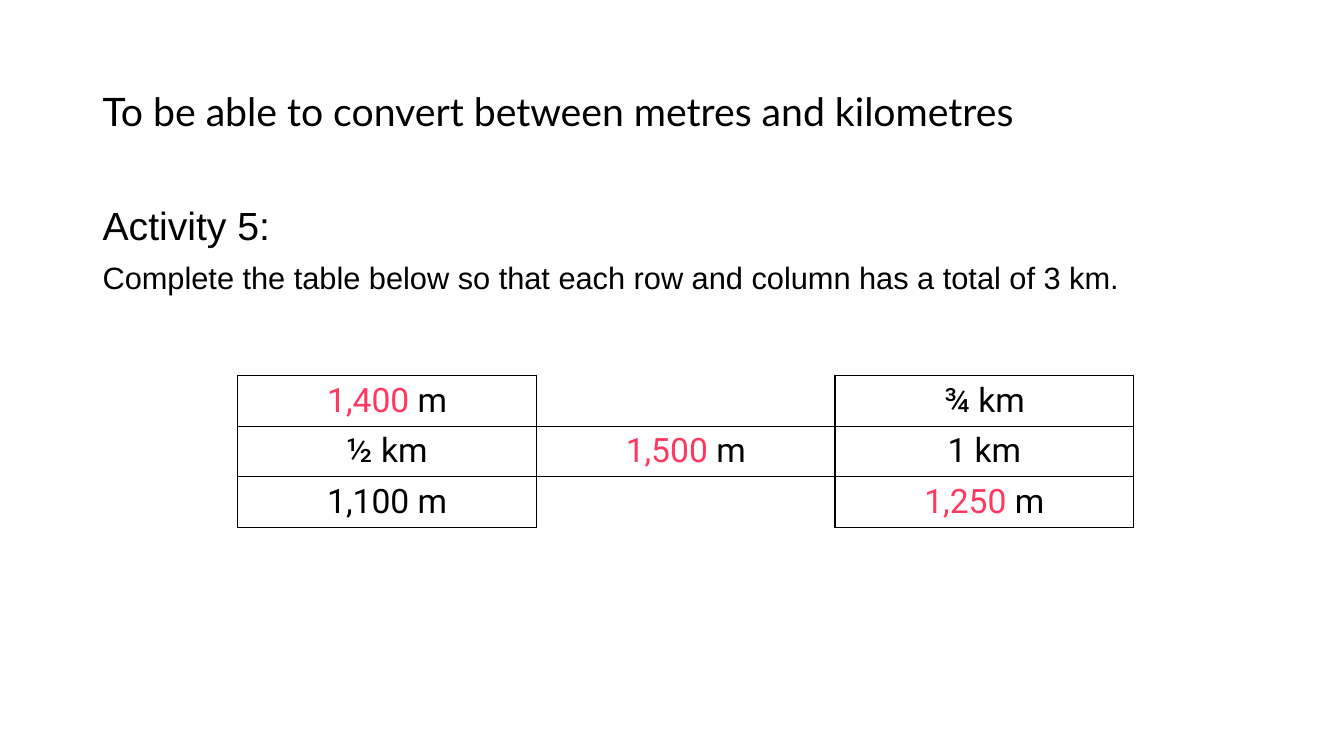
from lxml import etree
from pptx import Presentation
from pptx.dml.color import RGBColor
from pptx.enum import text
from pptx.oxml import ns
from pptx.util import Pt

BLACK = RGBColor(0x00, 0x00, 0x00)
WHITE = RGBColor(0xFF, 0xFF, 0xFF)
ANSWER_RED = RGBColor(0xFF, 0x38, 0x60)

TITLE = [("To be able to convert between metres and kilometres", 28)]
TASK = [
    ("Activity 5:", 28),
    ("Complete the table below so that each row and column has a total of 3 km.", 22),
]
# Each cell is (answer in red, remainder in black); None is an open cell.
LENGTHS = [
    [("1,400", " m"), None, ("", "¾ km")],
    [("", "½ km"), ("1,500", " m"), ("", "1 km")],
    [("", "1,100 m"), None, ("1,250", " m")],
]

TEXT_LEFT = 66.24
TABLE_LEFT, TABLE_TOP = 169.9, 268.5
COLUMN_WIDTH, ROW_HEIGHT = 213.3, 35.6


def style_run(run, font_name, size, color):
    run.font.name = font_name
    run.font.size = Pt(size)
    run.font.color.rgb = color


def add_text(slide, lines, font_name, top, width, height, anchor):
    box = slide.shapes.add_textbox(Pt(TEXT_LEFT), Pt(top), Pt(width), Pt(height))
    frame = box.text_frame
    frame.word_wrap = True
    frame.vertical_anchor = anchor
    frame.text = "\n".join(line for line, size in lines)
    for index, (paragraph, (line, size)) in enumerate(zip(frame.paragraphs, lines)):
        paragraph.line_spacing = 0.9
        paragraph.space_before = Pt(10 if index else 0)
        style_run(paragraph.runs[0], font_name, size, BLACK)


def set_borders(cell, visible_sides):
    """Draw the given sides (of "LRTB") in black and hide the others."""
    properties = cell._tc.get_or_add_tcPr()
    for side in "LRTB":
        line = etree.SubElement(properties, ns.qn(f"a:ln{side}"), w=str(Pt(1)))
        if side in visible_sides:
            fill = etree.SubElement(line, ns.qn("a:solidFill"))
            etree.SubElement(fill, ns.qn("a:srgbClr"), val=str(BLACK))
        else:
            etree.SubElement(line, ns.qn("a:noFill"))


def fill_cell(cell, parts):
    cell.fill.solid()
    cell.fill.fore_color.rgb = WHITE
    paragraph = cell.text_frame.paragraphs[0]
    paragraph.alignment = text.PP_ALIGN.CENTER
    for part, color in zip(parts, (ANSWER_RED, BLACK)):
        if part:
            run = paragraph.add_run()
            run.text = part
            style_run(run, "Roboto", 24, color)


def add_length_table(slide):
    row_count, column_count = len(LENGTHS), len(LENGTHS[0])
    table = slide.shapes.add_table(
        row_count, column_count, Pt(TABLE_LEFT), Pt(TABLE_TOP),
        Pt(COLUMN_WIDTH * column_count), Pt(ROW_HEIGHT * row_count)).table
    table.first_row = False
    table.horz_banding = False
    for column in table.columns:
        column.width = Pt(COLUMN_WIDTH)
    for row_index, row in enumerate(LENGTHS):
        table.rows[row_index].height = Pt(ROW_HEIGHT)
        for column_index, parts in enumerate(row):
            cell = table.cell(row_index, column_index)
            if parts:
                set_borders(cell, "LRTB")
                fill_cell(cell, parts)
            else:
                set_borders(cell, "LRB" if row_index == 0 else "LRT")
                cell.fill.background()


def main():
    presentation = Presentation()
    presentation.slide_width, presentation.slide_height = Pt(960), Pt(540)
    slide = presentation.slides.add_slide(presentation.slide_layouts[6])
    add_text(slide, TITLE, "Lato", 28.8, 691.2, 104.4, text.MSO_ANCHOR.MIDDLE)
    add_text(slide, TASK, "Arial", 144, 828, 342.7, text.MSO_ANCHOR.TOP)
    add_length_table(slide)
    presentation.save("out.pptx")


if __name__ == "__main__":
    main()
